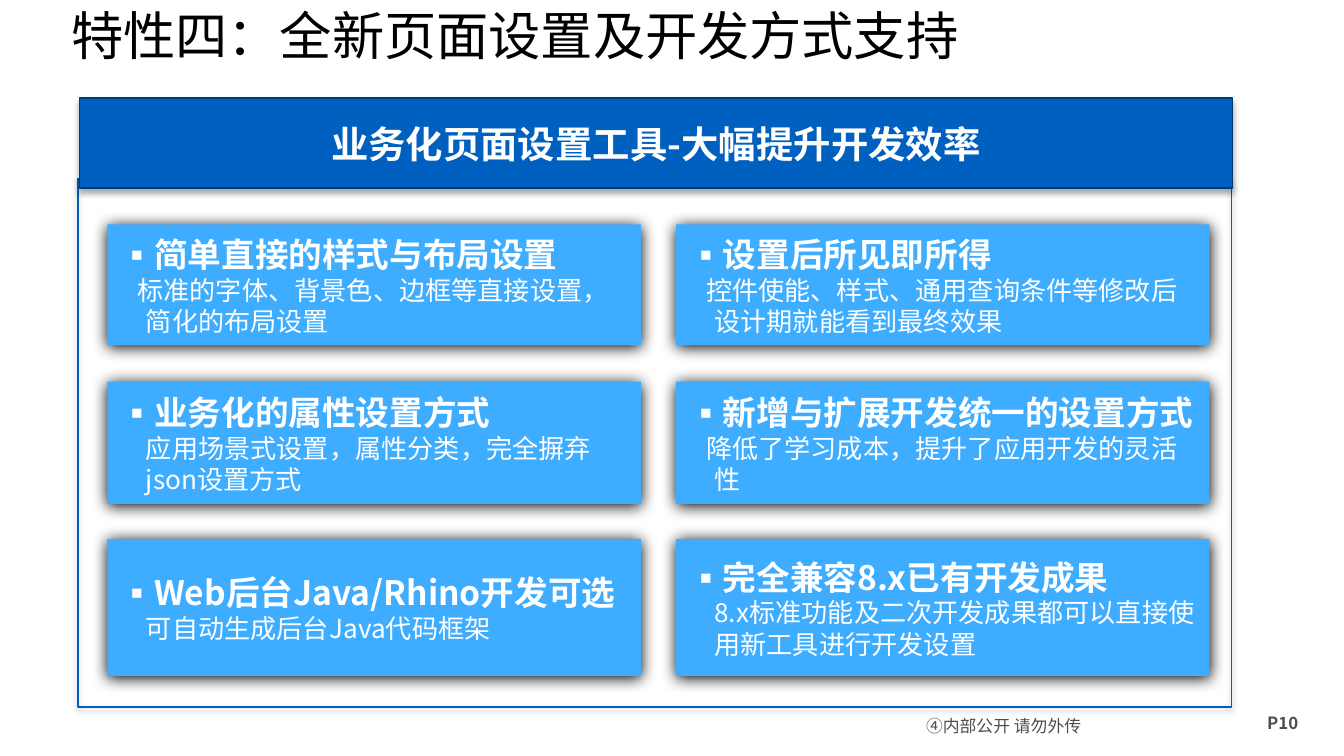
"""Build the slide on page setup tools and development support."""
from dataclasses import dataclass

from lxml.etree import SubElement
from pptx import Presentation
from pptx.dml.color import RGBColor
from pptx.enum.shapes import MSO_SHAPE
from pptx.enum.text import MSO_ANCHOR, PP_ALIGN
from pptx.oxml.ns import qn
from pptx.util import Pt


@dataclass(frozen=True)
class Theme:
    font: str = "Noto Sans CJK SC"
    black: str = "000000"
    white: str = "FFFFFF"
    grey: str = "4D4D4D"
    frame_line: str = "005EBC"
    banner_fill: str = "0060C0"
    banner_line: str = "003B76"
    card_fill: str = "3FADFF"
    title: int = 28
    banner: int = 20
    heading: int = 18
    detail: int = 14
    footer: int = 9


theme = Theme()


def write(paragraph, text, *, size, color, bold=False, align=PP_ALIGN.LEFT,
          leading=None, margin=0, indent=0, bullet=None):
    paragraph.alignment = align
    if leading:
        paragraph.line_spacing = Pt(leading)
    properties = paragraph._p.get_or_add_pPr()
    properties.set("marL", str(Pt(margin)))
    properties.set("indent", str(Pt(indent)))
    if bullet:
        SubElement(properties, qn("a:buFont"), typeface=theme.font)
        SubElement(properties, qn("a:buChar"), char=bullet)
    run = paragraph.add_run()
    run.text = text
    run.font.size = Pt(size)
    run.font.bold = bold
    run.font.color.rgb = RGBColor.from_string(color)
    run.font.name = theme.font
    SubElement(run._r.get_or_add_rPr(), qn("a:ea"), typeface=theme.font)


def add_panel(left, top, width, height, *, fill, line, alpha, blur, distance):
    panel = slide.shapes.add_shape(
        MSO_SHAPE.RECTANGLE, Pt(left), Pt(top), Pt(width), Pt(height))
    if fill:
        panel.fill.solid()
        panel.fill.fore_color.rgb = RGBColor.from_string(fill)
    else:
        panel.fill.background()
    if line:
        panel.line.color.rgb = RGBColor.from_string(line)
        panel.line.width = Pt(0.75)
    else:
        panel.line.fill.background()
    panel.shadow.inherit = False
    effects = panel._element.spPr.find(qn("a:effectLst"))
    shadow = SubElement(effects, qn("a:outerShdw"), blurRad=str(Pt(blur)),
                        dist=str(Pt(distance)), dir="5400000", rotWithShape="0")
    shade = SubElement(shadow, qn("a:srgbClr"), val=theme.black)
    SubElement(shade, qn("a:alpha"), val=str(alpha * 1000))
    panel.text_frame.word_wrap = True
    panel.text_frame.vertical_anchor = MSO_ANCHOR.MIDDLE
    return panel


deck = Presentation()
deck.slide_width, deck.slide_height = Pt(720), Pt(405)
slide = deck.slides.add_slide(deck.slide_layouts[6])

notice = slide.shapes.add_textbox(Pt(490.3), Pt(379.4), Pt(127.4), Pt(19.4)).text_frame
notice.word_wrap = True
notice.margin_left = notice.margin_right = Pt(5.8)
notice.margin_top = notice.margin_bottom = Pt(0.7)
write(notice.paragraphs[0], "④内部公开 请勿外传", size=theme.footer,
      color=theme.grey, align=PP_ALIGN.JUSTIFY, leading=14)

page_number = slide.shapes.add_textbox(Pt(671.8), Pt(378), Pt(40.3), Pt(18)).text_frame
page_number.word_wrap = True
write(page_number.paragraphs[0], "P10", size=theme.footer, color=theme.grey, bold=True)

title = slide.shapes.add_textbox(Pt(31), Pt(0), Pt(527), Pt(36.7)).text_frame
title.word_wrap = True
title.vertical_anchor = MSO_ANCHOR.MIDDLE
write(title.paragraphs[0], "特性四：全新页面设置及开发方式支持",
      size=theme.title, color=theme.black)

soft = dict(alpha=35, blur=3.1, distance=1.8)
add_panel(41.8, 95.8, 617.8, 283, fill=None, line=theme.frame_line, **soft)
banner = add_panel(42.5, 52.6, 617.8, 48.2, fill=theme.banner_fill,
                   line=theme.banner_line, **soft)
write(banner.text_frame.paragraphs[0], "业务化页面设置工具-大幅提升开发效率",
      size=theme.banner, color=theme.white, bold=True, align=PP_ALIGN.CENTER)

outdent = -4.5
rows = [
    (64.8, [("简单直接的样式与布局设置",
             "标准的字体、背景色、边框等直接设置，简化的布局设置", outdent),
            ("设置后所见即所得",
             "控件使能、样式、通用查询条件等修改后设计期就能看到最终效果", outdent)]),
    (65.5, [("业务化的属性设置方式",
             "应用场景式设置，属性分类，完全摒弃json设置方式", 0),
            ("新增与扩展开发统一的设置方式",
             "降低了学习成本，提升了应用开发的灵活性", outdent)]),
    (73.4, [("Web后台Java/Rhino开发可选",
             "可自动生成后台Java代码框架", 0),
            ("完全兼容8.x已有开发成果",
             "8.x标准功能及二次开发成果都可以直接使用新工具进行开发设置", 0)]),
]
for row, (height, cards) in enumerate(rows):
    for column, (heading, detail, detail_indent) in enumerate(cards):
        card = add_panel(57.6 + column * 304.6, 120.2 + row * 84.3, 285.8, height,
                         fill=theme.card_fill, line=None,
                         alpha=100, blur=8.5, distance=1).text_frame
        write(card.paragraphs[0], heading, size=theme.heading, color=theme.white,
              bold=True, leading=22, margin=13.5, indent=-13.5, bullet="▪")
        write(card.add_paragraph(), detail, size=theme.detail, color=theme.white,
              leading=16.7, margin=13.5, indent=detail_indent)

deck.save("out.pptx")
